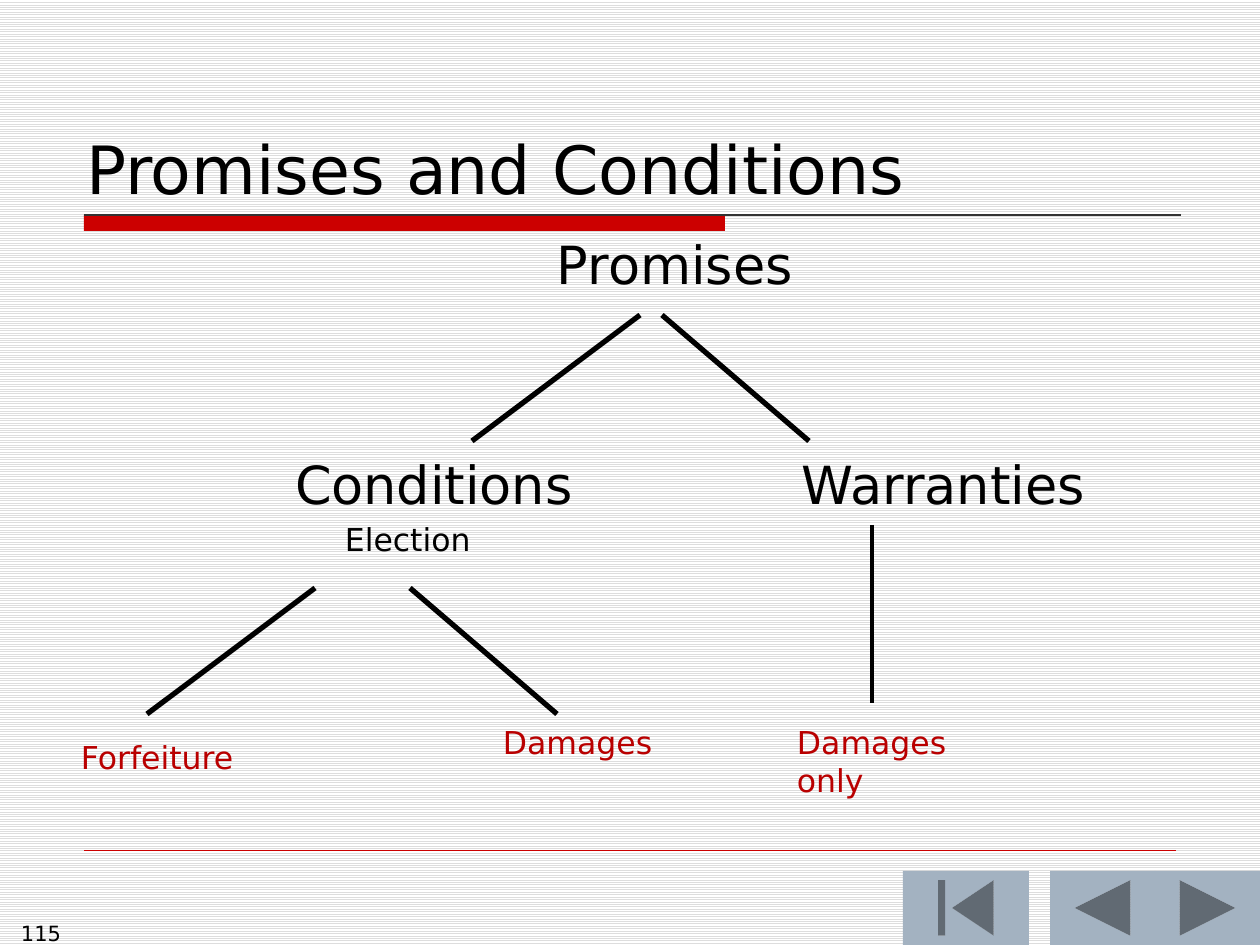
import pptx
import pptx.util
import pptx.dml.color
import pptx.enum.dml
import pptx.enum.shapes
import pptx.enum.text
import lxml.etree

COLORS = {
    "ink": "000000",
    "red": "CC0000",
    "leaf": "B90000",
    "rule": "333333",
    "button": "A3B2C1",
    "stripe": "DDDDDD",
    "paper": "FFFFFF",
}
FONT = "DejaVu Sans"
SHAPE = pptx.enum.shapes.MSO_SHAPE
ALIGN = pptx.enum.text.PP_ALIGN


def px(n):
    return pptx.util.Emu(round(n * 914400 / 126))


def color(name):
    return pptx.dml.color.RGBColor.from_string(COLORS[name])


def write(frame, text, size=18, ink="ink", align=ALIGN.LEFT):
    frame.word_wrap = True
    frame.margin_left = frame.margin_right = 0
    frame.margin_top = frame.margin_bottom = 0
    par = frame.paragraphs[0]
    par.alignment = align
    run = par.add_run()
    run.text = text
    run.font.name = FONT
    run.font.size = pptx.util.Pt(size)
    run.font.color.rgb = color(ink)


class Deck:
    def __init__(self, wide, high):
        self.show = pptx.Presentation()
        self.show.slide_width = px(wide)
        self.show.slide_height = px(high)
        self.slide = self.show.slides.add_slide(self.show.slide_layouts[6])

    def paper(self):
        fill = self.slide.background.fill
        fill.patterned()
        fill.pattern = pptx.enum.dml.MSO_PATTERN.LIGHT_HORIZONTAL
        fill.fore_color.rgb = color("stripe")
        fill.back_color.rgb = color("paper")

    def shape(self, kind, x, y, w, h, fill):
        item = self.slide.shapes.add_shape(kind, px(x), px(y), px(w), px(h))
        item.shadow.inherit = False
        item.fill.solid()
        item.fill.fore_color.rgb = color(fill)
        item.line.fill.background()

    def line(self, x1, y1, x2, y2, width=3, ink="ink"):
        kind = pptx.enum.shapes.MSO_CONNECTOR.STRAIGHT
        item = self.slide.shapes.add_connector(kind, px(x1), px(y1), px(x2), px(y2))
        item.line.width = pptx.util.Pt(width)
        item.line.color.rgb = color(ink)
        props = item._element.spPr
        lxml.etree.SubElement(props, pptx.oxml.ns.qn("a:effectLst"))

    def fork(self, left, right, y):
        self.line(left, y, left - 168, y + 126)
        self.line(right, y, right + 147, y + 126)

    def text(self, text, x, y, w, h, **style):
        box = self.slide.shapes.add_textbox(px(x), px(y), px(w), px(h))
        write(box.text_frame, text, **style)


def main():
    deck = Deck(1260, 945)
    deck.paper()

    deck.shape(SHAPE.RECTANGLE, 84, 215, 641, 16, "red")
    deck.line(84, 215, 1181, 215, width=0.75, ink="rule")
    deck.line(84, 850, 1176, 850, width=0.25, ink="red")
    for kind, x, w in (
        (SHAPE.ACTION_BUTTON_BEGINNING, 903, 126),
        (SHAPE.ACTION_BUTTON_BACK_OR_PREVIOUS, 1050, 105),
        (SHAPE.ACTION_BUTTON_FORWARD_OR_NEXT, 1155, 105),
    ):
        deck.shape(kind, x, 871, w, 74, "button")

    deck.text("115", 0, 921, 61, 24, size=12, align=ALIGN.RIGHT)
    deck.text("Promises and Conditions", 86, 128, 1080, 78, size=38)

    for label, x, y in (
        ("Promises", 557, 232),
        ("Conditions", 295, 452),
        ("Warranties", 802, 452),
    ):
        deck.text(label, x, y, 320, 61, size=30)
    deck.text("Election", 345, 520, 190, 37)

    deck.fork(640, 662, 315)
    deck.fork(315, 410, 588)
    deck.line(872, 525, 872, 703, width=2.25)

    for label, x, y, h in (
        ("Forfeiture", 81, 738, 37),
        ("Damages", 503, 723, 37),
        ("Damages only", 797, 723, 74),
    ):
        deck.text(label, x, y, 190, h, ink="leaf")

    deck.show.save("out.pptx")


if __name__ == "__main__":
    main()
